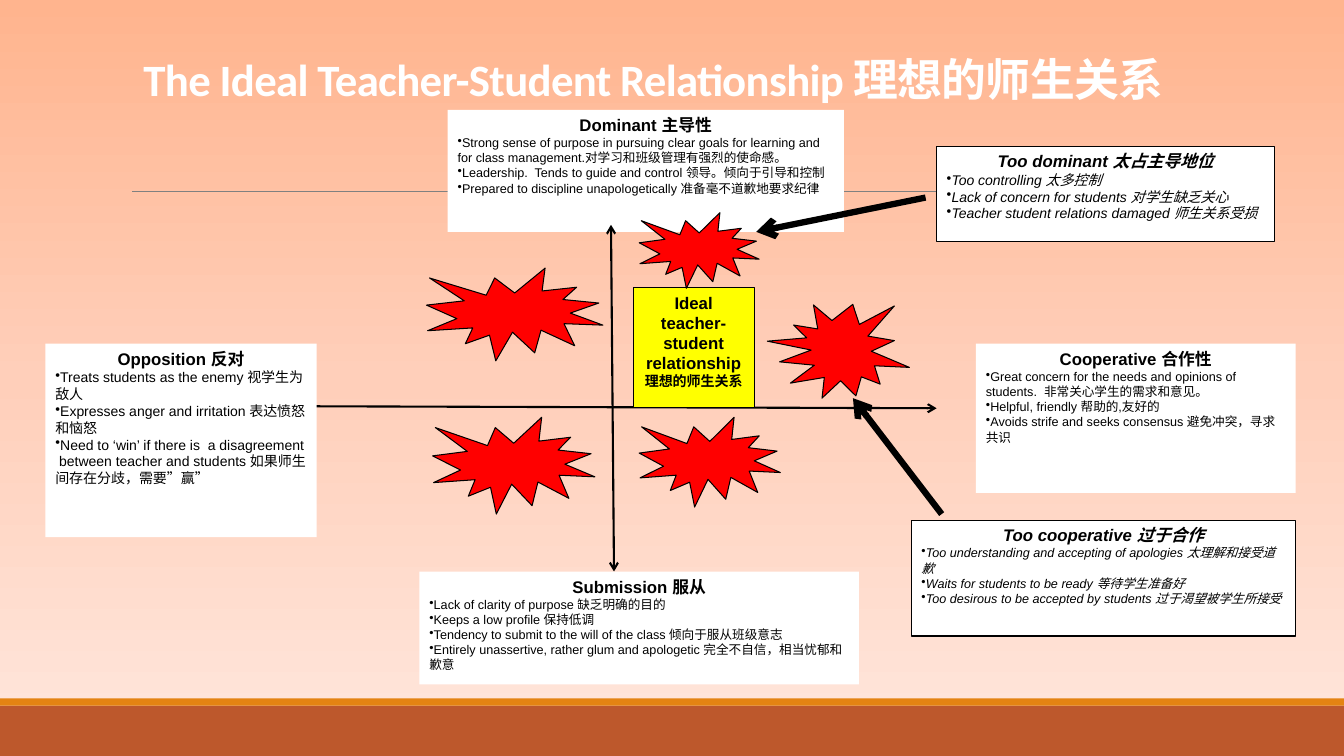
from copy import deepcopy
from dataclasses import dataclass

from lxml.etree import SubElement
from pptx import Presentation
from pptx.dml.color import RGBColor
from pptx.enum.shapes import MSO_CONNECTOR, MSO_SHAPE
from pptx.enum.text import MSO_ANCHOR, PP_ALIGN
from pptx.oxml.ns import qn
from pptx.util import Inches, Pt


@dataclass(frozen=True)
class Theme:
    white: str = "FFFFFF"
    black: str = "000000"
    rust: str = "BD582C"
    orange: str = "E48312"
    rule: str = "808080"
    ideal: str = "FFFF00"
    conflict: str = "FF0000"
    sky: tuple = ((0, "FFB48E"), (0.5, "FFCFBA"), (1, "FFE7DD"))
    title_font: str = "Calibri"
    body_font: str = "Arial"
    title: int = 32
    heading: int = 12
    medium: int = 10
    small: int = 9
    outline: float = 0.75


THEME = Theme()

# Each card: heading, place, bullet size, points; a leading space continues the point above
DOMINANT = ("Dominant 主导性", (4.44, 1.09, 3.93, 1.21), THEME.small, [
    "Strong sense of purpose in pursuing clear goals for learning and for class management."
    "对学习和班级管理有强烈的使命感。",
    "Leadership.  Tends to guide and control 领导。倾向于引导和控制",
    "Prepared to discipline unapologetically 准备毫不道歉地要求纪律"])
COOPERATIVE = ("Cooperative 合作性", (9.68, 3.41, 3.17, 1.48), THEME.small, [
    "Great concern for the needs and opinions of students.  非常关心学生的需求和意见。",
    "Helpful, friendly 帮助的,友好的",
    "Avoids strife and seeks consensus 避免冲突，寻求共识"])
OPPOSITION = ("Opposition 反对", (0.45, 3.41, 2.69, 1.92), THEME.medium, [
    "Treats students as the enemy 视学生为敌人",
    "Expresses anger and irritation 表达愤怒和恼怒",
    "Need to ‘win’ if there is  a disagreement",
    " between teacher and students 如果师生间存在分歧，需要”赢”"])
SUBMISSION = ("Submission 服从", (4.16, 5.67, 4.36, 1.12), THEME.small, [
    "Lack of clarity of purpose 缺乏明确的目的",
    "Keeps a low profile 保持低调",
    "Tendency to submit to the will of the class 倾向于服从班级意志",
    "Entirely unassertive, rather glum and apologetic 完全不自信，相当忧郁和歉意"])
TOO_DOMINANT = ("Too dominant 太占主导地位", (9.29, 1.45, 3.35, 0.95), THEME.medium, [
    "Too controlling 太多控制",
    "Lack of concern for students 对学生缺乏关心",
    "Teacher student relations damaged 师生关系受损"])
TOO_COOPERATIVE = ("Too cooperative 过于合作", (9.04, 5.16, 3.81, 1.15), THEME.small, [
    "Too understanding and accepting of apologies 太理解和接受道歉",
    "Waits for students to be ready 等待学生准备好",
    "Too desirous to be accepted by students 过于渴望被学生所接受"])

# Places of the red bursts, with their rotation
BURSTS = [((6.34, 2.11, 1.19, 0.75), 0), ((7.85, 2.78, 0.93, 1.41), 90),
          ((4.23, 2.66, 1.75, 0.92), 0), ((4.29, 4.14, 1.61, 0.96), 0),
          ((6.34, 4.14, 1.4, 0.89), 0)]


def rgb(color):
    return RGBColor.from_string(color)


def write(paragraph, text, size, font=THEME.body_font, color=THEME.black,
          bold=False, italic=False, align=PP_ALIGN.LEFT):
    paragraph.alignment = align
    run = paragraph.add_run()
    run.text = text
    run.font.name = font
    run.font.size = Pt(size)
    run.font.bold = bold
    run.font.italic = italic
    run.font.color.rgb = rgb(color)
    return run


def add_block(slide, place, fill, outline=None, preset=MSO_SHAPE.RECTANGLE, rotation=0):
    block = slide.shapes.add_shape(preset, *map(Inches, place))
    block.shadow.inherit = False
    block.rotation = rotation
    block.fill.solid()
    block.fill.fore_color.rgb = rgb(fill)
    if outline:
        block.line.color.rgb = rgb(outline)
        block.line.width = Pt(THEME.outline)
    else:
        block.line.fill.background()
    block.text_frame.word_wrap = True
    block.text_frame.vertical_anchor = MSO_ANCHOR.TOP
    return block


def add_card(slide, heading, place, size, points, extreme=False):
    """White card; an extreme one is outlined and italic."""
    card = add_block(slide, place, THEME.white, THEME.black if extreme else None)
    frame = card.text_frame
    write(frame.paragraphs[0], heading, THEME.heading, bold=True, italic=extreme,
          align=PP_ALIGN.CENTER)
    for point in points:
        paragraph = frame.add_paragraph()
        write(paragraph, point, size, italic=extreme)
        if not point.startswith(" "):
            properties = paragraph._p.get_or_add_pPr()
            SubElement(properties, qn("a:buChar")).set("char", "•")


def add_line(slide, start, end, color, width, arrows=()):
    line = slide.shapes.add_connector(MSO_CONNECTOR.STRAIGHT, *map(Inches, start + end))
    line.line.color.rgb = rgb(color)
    line.line.width = Pt(width)
    properties = line.element.find(qn("p:spPr"))
    for tip in arrows:
        SubElement(properties.find(qn("a:ln")), qn(f"a:{tip}")).set("type", "arrow")
    SubElement(properties, qn("a:effectLst"))


def paint_background(slide):
    fill = slide.background.fill
    fill.gradient()
    fill.gradient_angle = 270
    stop_list = next(slide.element.iter(qn("a:gsLst")))
    stop_list.insert(1, deepcopy(stop_list[0]))
    for stop, (position, color) in zip(fill.gradient_stops, THEME.sky):
        stop.position = position
        stop.color.rgb = rgb(color)


def set_title(slide, text):
    title = slide.shapes.title
    title.left, title.top, title.width, title.height = map(Inches, (0.73, 0.09, 11.5, 1.01))
    title.text_frame.vertical_anchor = MSO_ANCHOR.BOTTOM
    title.text_frame.word_wrap = True
    paragraph = title.text_frame.paragraphs[0]
    paragraph.line_spacing = 0.85
    run = write(paragraph, text, THEME.title, font=THEME.title_font, color=THEME.white,
                bold=True, align=PP_ALIGN.CENTER)
    run.font._element.set("spc", "-50")


def main():
    deck = Presentation()
    deck.slide_width, deck.slide_height = Inches(13.33), Inches(7.5)
    slide = deck.slides.add_slide(deck.slide_layouts[5])

    # Backdrop and title
    paint_background(slide)
    add_block(slide, (0, 7, 13.33, 0.5), THEME.rust)
    add_block(slide, (0, 6.93, 13.33, 0.07), THEME.orange)
    add_line(slide, (1.31, 1.9), (12.21, 1.9), THEME.rule, 0.5)
    set_title(slide, "The Ideal Teacher-Student Relationship 理想的师生关系")

    # Axes and the four poles
    add_card(slide, *DOMINANT)
    both_ends = ("headEnd", "tailEnd")
    add_line(slide, (6.06, 2.23), (6.09, 5.67), THEME.black, 1.5, both_ends)
    add_line(slide, (2.94, 4.03), (9.29, 4.05), THEME.black, 1.5, both_ends)
    for pole in (COOPERATIVE, OPPOSITION, SUBMISSION):
        add_card(slide, *pole)

    # Ideal zone
    ideal = add_block(slide, (6.28, 2.85, 1.2, 1.19), THEME.ideal, THEME.black)
    label = ideal.text_frame.paragraphs[0]
    for text, size in (("Ideal teacher- student relationship", THEME.heading),
                       ("理想的师生关系", THEME.medium)):
        write(label, text, size, bold=True, align=PP_ALIGN.CENTER)

    # Extremes, bursts and the arrows that point at them
    for extreme in (TOO_DOMINANT, TOO_COOPERATIVE):
        add_card(slide, *extreme, extreme=True)
    for place, rotation in BURSTS:
        add_block(slide, place, THEME.conflict, THEME.black,
                  MSO_SHAPE.EXPLOSION1, rotation)
    for start, end in (((9.18, 1.96), (7.5, 2.3)), ((9.34, 5.1), (8.46, 3.95))):
        add_line(slide, start, end, THEME.black, 4.5, ("tailEnd",))

    deck.save("out.pptx")


if __name__ == "__main__":
    main()
